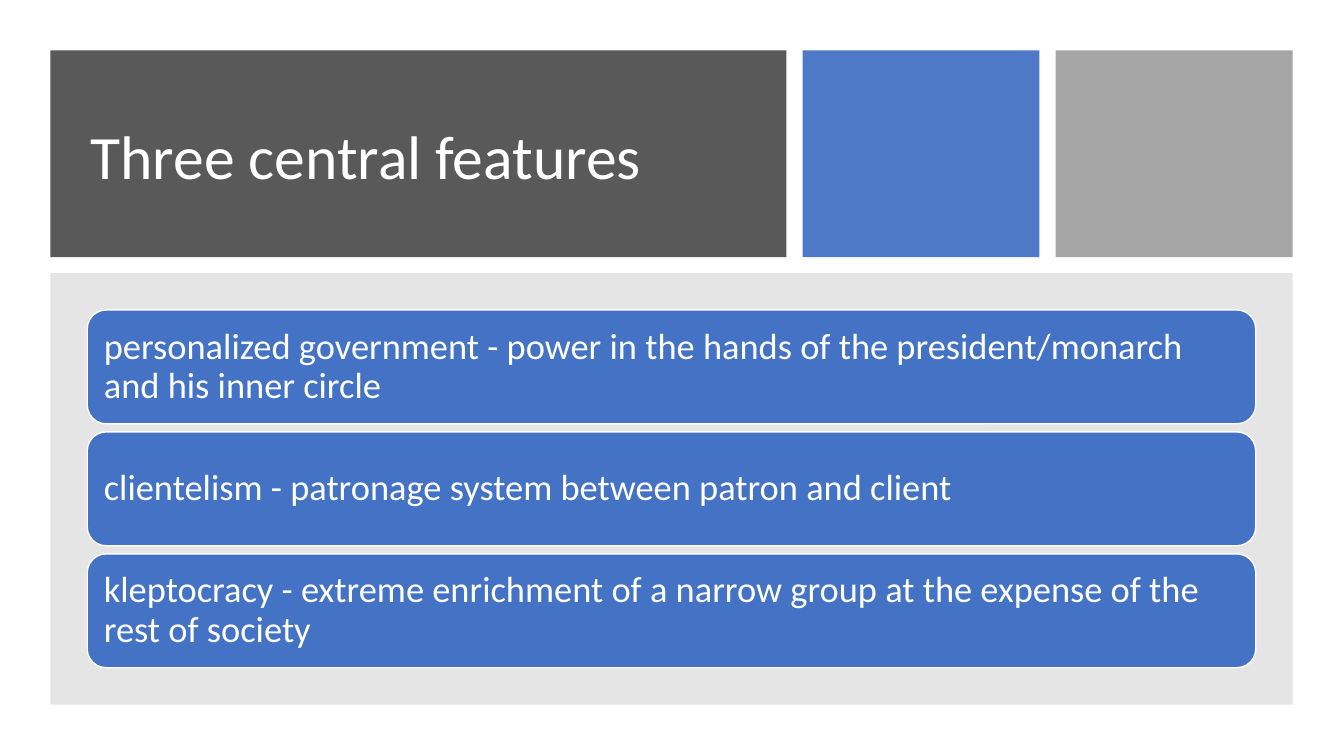
from lxml import etree
from pptx import Presentation
from pptx.dml.color import RGBColor
from pptx.enum.shapes import MSO_SHAPE
from pptx.enum.text import MSO_ANCHOR, PP_ALIGN
from pptx.oxml.ns import qn
from pptx.util import Inches, Pt

RECTANGLE = MSO_SHAPE.RECTANGLE
ROUNDED = MSO_SHAPE.ROUNDED_RECTANGLE
MIDDLE = MSO_ANCHOR.MIDDLE
LEFT = PP_ALIGN.LEFT

FONT = "Calibri"
COLORS = {
    "title": "595959",
    "blue": "4472C4",
    "gray": "A5A5A5",
    "panel": "808080",
    "white": "FFFFFF",
}
FEATURES = [
    "personalized government - power in the hands of the president/monarch "
    "and his inner circle",
    "clientelism - patronage system between patron and client",
    "kleptocracy - extreme enrichment of a narrow group at the expense of the "
    "rest of society",
]


def color(name):
    return RGBColor.from_string(COLORS[name])


def add_block(page, kind, box, fill, opacity=100):
    """Add a filled shape without outline; opacity is a percentage."""
    block = page.shapes.add_shape(kind, *map(Inches, box))
    block.shadow.inherit = False
    block.fill.solid()
    block.fill.fore_color.rgb = color(fill)
    block.line.fill.background()
    if opacity < 100:
        fill_color = block.fill._xPr.find(qn("a:solidFill"))[0]
        alpha = etree.SubElement(fill_color, qn("a:alpha"))
        alpha.set("val", str(opacity * 1000))
    return block


def write_text(shape, text, size, inset):
    frame = shape.text_frame
    frame.word_wrap = True
    frame.vertical_anchor = MIDDLE
    frame.margin_left = frame.margin_right = Inches(inset)
    frame.margin_top = frame.margin_bottom = Inches(inset)
    frame.text = text
    para = frame.paragraphs[0]
    para.alignment = LEFT
    para.line_spacing = 0.9
    para.font.name = FONT
    para.font.size = Pt(size)
    para.font.color.rgb = color("white")


def add_header(page, box):
    """Title block followed by two color tiles."""
    left, top, width, height = box
    gap, tile_width = 0.16, 2.35
    title_width = width - 2 * (tile_width + gap)
    add_block(page, RECTANGLE, (left, top, title_width, height), "title")
    title_box = (left + 0.3, top + 0.3, 6.66, 1.56)
    title = page.shapes.add_textbox(*map(Inches, title_box))
    write_text(title, "Three central features", 44, 0.1)
    tiles = [("blue", 95), ("gray", 100)]
    for index, (fill, opacity) in enumerate(tiles):
        tile_left = left + title_width + gap + index * (tile_width + gap)
        add_block(page, RECTANGLE, (tile_left, top, tile_width, height), fill, opacity)


def add_features(page, box):
    """Pale panel with one rounded bar per feature."""
    left, top, width, height = box
    add_block(page, RECTANGLE, box, "panel", 20)
    margin, bar_height, pitch = 0.365, 1.13, 1.21
    for index, feature in enumerate(FEATURES):
        bar_top = top + margin + index * pitch
        bar_box = (left + margin, bar_top, width - 2 * margin, bar_height)
        bar = add_block(page, ROUNDED, bar_box, "blue")
        bar.line.color.rgb = color("white")
        bar.line.width = Pt(1)
        write_text(bar, feature, 26, 0.11)


def main():
    deck = Presentation()
    deck.slide_width = Inches(13.33)
    deck.slide_height = Inches(7.5)
    page = deck.slides.add_slide(deck.slide_layouts[6])
    add_header(page, (0.5, 0.5, 12.32, 2.05))
    add_features(page, (0.5, 2.71, 12.32, 4.28))
    deck.save("out.pptx")


if __name__ == "__main__":
    main()
